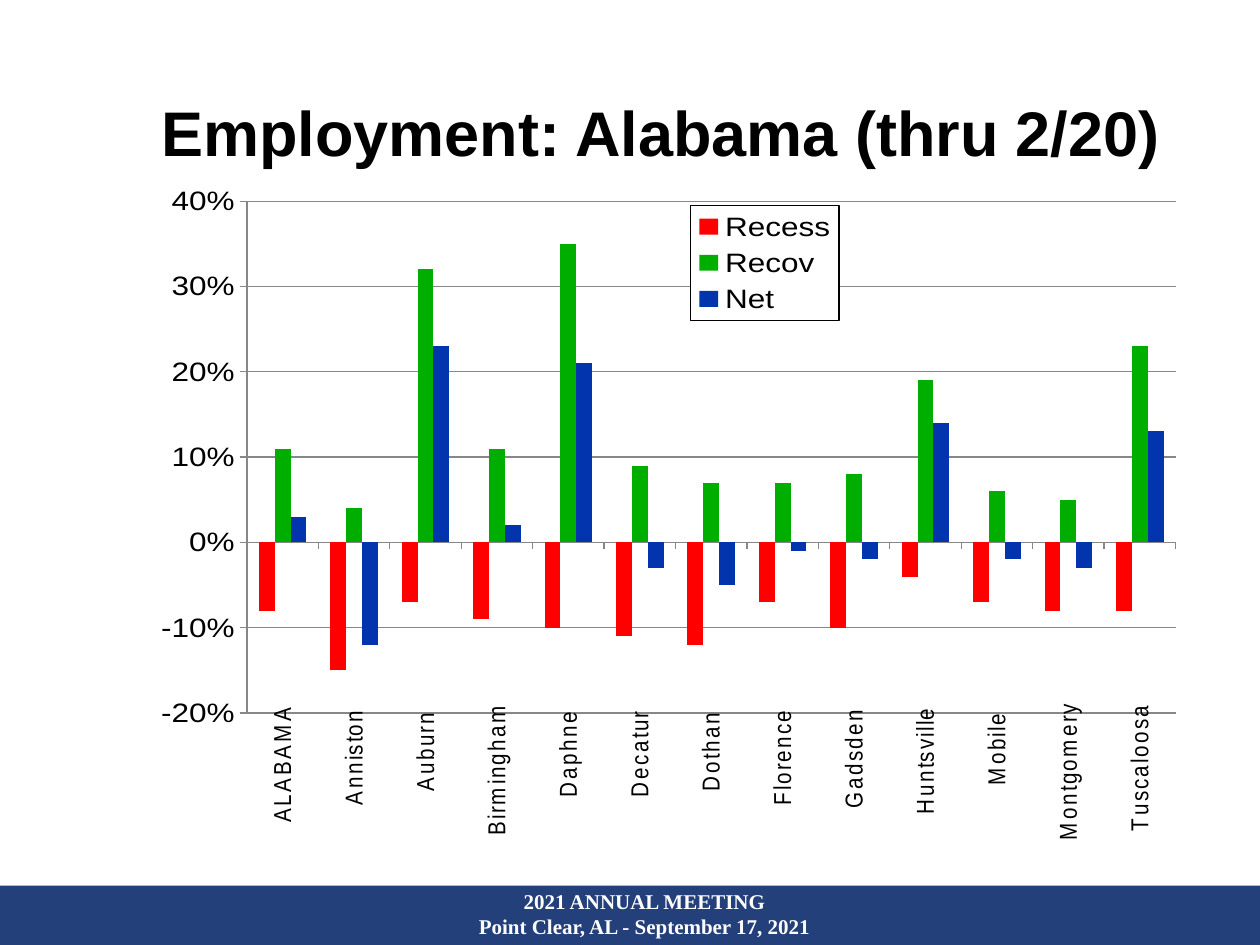
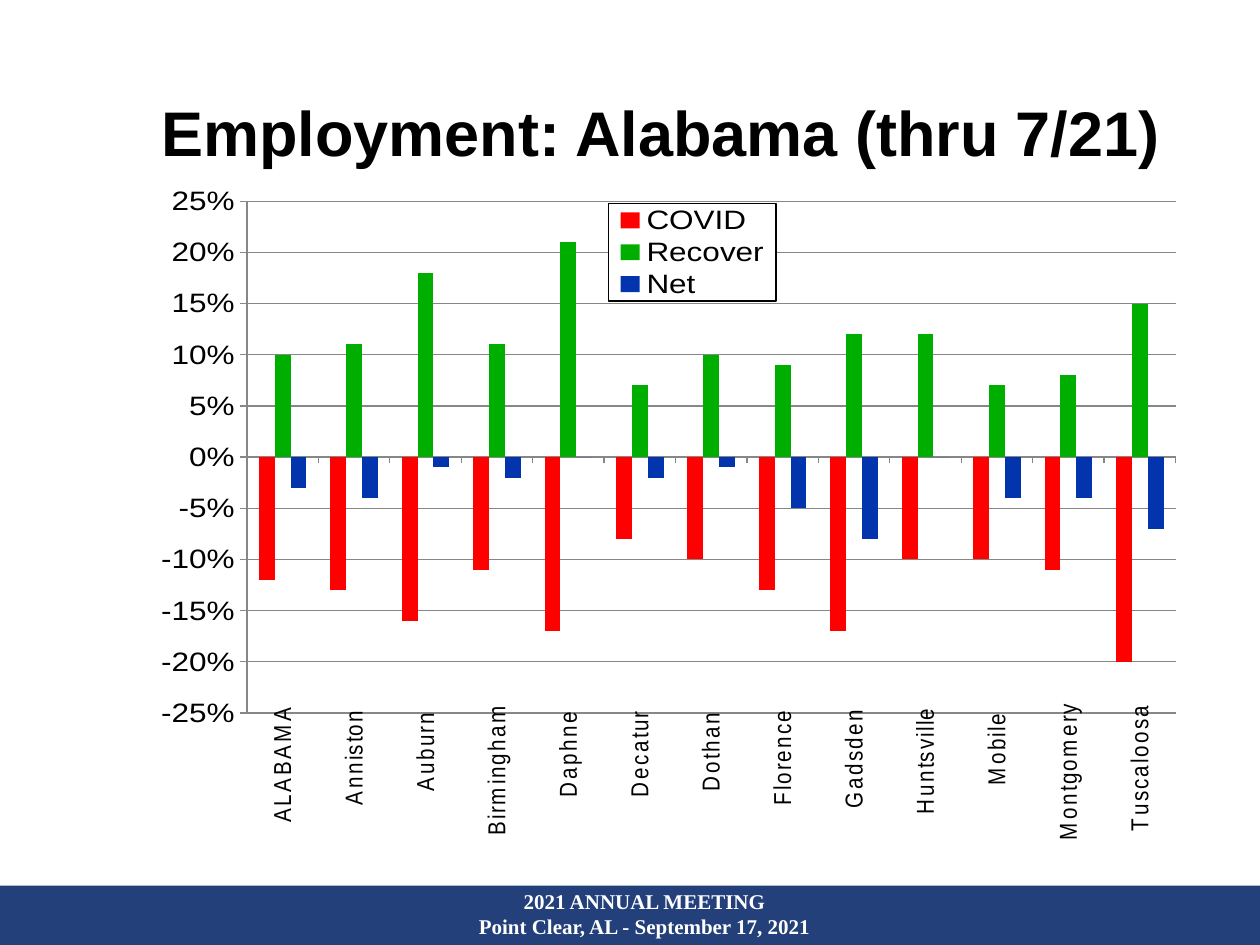
from pptx import Presentation, util as u
from pptx.chart.data import CategoryChartData
from pptx.dml.color import RGBColor
from pptx.enum import chart as charts, shapes, text
from pptx.oxml import parse_xml
from pptx.oxml.ns import nsdecls

BLACK, WHITE, NAVY, GRID = "000000", "FFFFFF", "23407A", "878787"
SERIES_COLOURS = ("FF0000", "00AE00", "0234AD")
TITLE_BOX = (1.08, 0.67, 8.33, 0.83)
CHART_BOX = (1.08, 1.42, 8.58, 5.25)
BAND_BOX = (0, 7.03, 10, 0.47)
FOOTER_BOX = (2.24, 7, 5.75, 0.52)
PLOT_BOX = (0.88, 0.21, 7.37, 4.82)
FOOTER_LINES = ("2021 ANNUAL MEETING", "Point Clear, AL - September 17, 2021")
CITIES = ("ALABAMA", "Anniston", "Auburn", "Birmingham", "Daphne", "Decatur", "Dothan",
          "Florence", "Gadsden", "Huntsville", "Mobile", "Montgomery", "Tuscaloosa")

EMPLOYMENT_SLIDES = (
    {
        "title": "Employment: Alabama (thru 2/20)",
        "scale": (-0.2, 0.4, 0.1),
        "legend_box": (4.4, 0.25, 1.18, 1.08),
        "series": {
            "Recess": (-0.08, -0.15, -0.07, -0.09, -0.1, -0.11, -0.12, -0.07, -0.1,
                       -0.04, -0.07, -0.08, -0.08),
            "Recov": (0.11, 0.04, 0.32, 0.11, 0.35, 0.09, 0.07, 0.07, 0.08,
                      0.19, 0.06, 0.05, 0.23),
            "Net": (0.03, -0.12, 0.23, 0.02, 0.21, -0.03, -0.05, -0.01, -0.02,
                    0.14, -0.02, -0.03, 0.13),
        },
    },
    {
        "title": "Employment: Alabama (thru 7/21)",
        "scale": (-0.25, 0.25, 0.05),
        "legend_box": (3.75, 0.23, 1.33, 0.92),
        "series": {
            "COVID": (-0.12, -0.13, -0.16, -0.11, -0.17, -0.08, -0.1, -0.13, -0.17,
                      -0.1, -0.1, -0.11, -0.2),
            "Recover": (0.1, 0.11, 0.18, 0.11, 0.21, 0.07, 0.1, 0.09, 0.12,
                        0.12, 0.07, 0.08, 0.15),
            "Net": (-0.03, -0.04, -0.01, -0.02, 0, -0.02, -0.01, -0.05, -0.08,
                    0, -0.04, -0.04, -0.07),
        },
    },
)


def colour(hex_string):
    """Turn a hex string into a colour."""
    return RGBColor.from_string(hex_string)


def inches(box):
    """Turn a box in inches into lengths."""
    return [u.Inches(length) for length in box]


def style_font(font, size, hex_string=BLACK, name="Arial", bold=False):
    """Format a font."""
    font.size, font.name, font.bold = u.Pt(size), name, bold
    font.color.rgb = colour(hex_string)


def write(paragraph, words, spacing=None, **font_format):
    """Write a centred paragraph with the given font format."""
    paragraph.alignment = text.PP_ALIGN.CENTER
    paragraph.line_spacing = spacing
    run = paragraph.add_run()
    run.text = words
    style_font(run.font, **font_format)


def add_title(slide, box, words):
    """Place and format the title placeholder."""
    title = slide.shapes.title
    title.left, title.top, title.width, title.height = inches(box)
    frame = title.text_frame
    frame.auto_size = text.MSO_AUTO_SIZE.NONE
    frame.vertical_anchor = text.MSO_ANCHOR.MIDDLE
    write(frame.paragraphs[0], words, spacing=0.89, size=36, bold=True)


def add_footer(slide, band_box, text_box):
    """Draw the footer band with the meeting details."""
    band = slide.shapes.add_shape(shapes.MSO_SHAPE.RECTANGLE, *inches(band_box))
    band.shadow.inherit = False
    band.fill.solid()
    band.fill.fore_color.rgb = colour(NAVY)
    band.line.fill.background()
    frame = slide.shapes.add_textbox(*inches(text_box)).text_frame
    frame.word_wrap = True
    for index, line in enumerate(FOOTER_LINES):
        paragraph = frame.add_paragraph() if index else frame.paragraphs[0]
        write(paragraph, line, size=12, hex_string=WHITE, name="Times New Roman", bold=True)


def manual_layout(box, chart_box, inner=False):
    """Build a layout element for a box in inches within the chart."""
    width, height = chart_box[2:]
    fractions = (side / whole for side, whole in zip(box, (width, height) * 2))
    target = '<c:layoutTarget val="inner"/>' if inner else ""
    modes = '<c:xMode val="edge"/><c:yMode val="edge"/>'
    sizes = "".join(f'<c:{key} val="{value:.4f}"/>' for key, value in zip("xywh", fractions))
    return parse_xml(f'<c:layout {nsdecls("c")}><c:manualLayout>{target}{modes}{sizes}'
                     '</c:manualLayout></c:layout>')


def replace_layout(element, layout, position):
    """Put a layout into a chart element in place of any present one."""
    for present in element.xpath("./c:layout"):
        element.remove(present)
    element.insert(position, layout)


def style_axes(chart, scale):
    """Format both axes and the gridlines."""
    categories, values = chart.category_axis, chart.value_axis
    values.minimum_scale, values.maximum_scale, values.major_unit = scale
    values.has_major_gridlines = True
    values.major_gridlines.format.line.color.rgb = colour(GRID)
    values.tick_labels.number_format = "0%"
    values.tick_labels.number_format_is_linked = False
    categories.tick_label_position = charts.XL_TICK_LABEL_POSITION.LOW
    for axis, size in ((categories, 14), (values, 18)):
        axis.major_tick_mark = charts.XL_TICK_MARK.OUTSIDE
        axis.minor_tick_mark = charts.XL_TICK_MARK.NONE
        axis.format.line.color.rgb = colour(GRID)
        style_font(axis.tick_labels.font, size)
    label_body = categories._element.xpath("./c:txPr/a:bodyPr")[0]
    label_body.set("rot", "-5400000")
    label_body.set("vert", "horz")


def style_legend(chart, layout):
    """Place the framed legend over the plot."""
    chart.has_legend = True
    legend = chart.legend
    legend.position = charts.XL_LEGEND_POSITION.RIGHT
    legend.include_in_layout = False
    style_font(legend.font, 18)
    replace_layout(legend._element, layout, 1)
    frame = parse_xml(f'<c:spPr {nsdecls("c", "a")}><a:solidFill><a:srgbClr val="{WHITE}"/>'
                      f'</a:solidFill><a:ln w="9525"><a:solidFill><a:srgbClr val="{BLACK}"/>'
                      '</a:solidFill></a:ln></c:spPr>')
    legend._element.xpath("./c:txPr")[0].addprevious(frame)


def add_employment_chart(slide, box, series, scale, legend_box):
    """Draw the clustered columns for the state and its metro areas."""
    data = CategoryChartData(number_format="0%")
    data.categories = CITIES
    for name, values in series.items():
        data.add_series(name, values)
    chart = slide.shapes.add_chart(
        charts.XL_CHART_TYPE.COLUMN_CLUSTERED, *inches(box), data).chart
    style_font(chart.font, 18)
    chart.has_title = False
    plot = chart.plots[0]
    plot.gap_width, plot.overlap, plot.vary_by_categories = 150, 0, False
    for columns, hex_string in zip(plot.series, SERIES_COLOURS):
        columns.invert_if_negative = False
        columns.format.fill.solid()
        columns.format.fill.fore_color.rgb = colour(hex_string)
    style_axes(chart, scale)
    style_legend(chart, manual_layout(legend_box, box))
    plot_area = chart._chartSpace.xpath("./c:chart/c:plotArea")[0]
    replace_layout(plot_area, manual_layout(PLOT_BOX, box, inner=True), 0)


def add_employment_slide(presentation, title, **chart_parts):
    """Add a slide with a title, a chart and the footer."""
    slide = presentation.slides.add_slide(presentation.slide_layouts[5])
    add_footer(slide, BAND_BOX, FOOTER_BOX)
    add_title(slide, TITLE_BOX, title)
    add_employment_chart(slide, CHART_BOX, **chart_parts)


def main():
    """Build and save the presentation."""
    presentation = Presentation()
    presentation.slide_width, presentation.slide_height = inches((10, 7.5))
    for parts in EMPLOYMENT_SLIDES:
        add_employment_slide(presentation, **parts)
    presentation.save("out.pptx")


if __name__ == "__main__":
    main()
